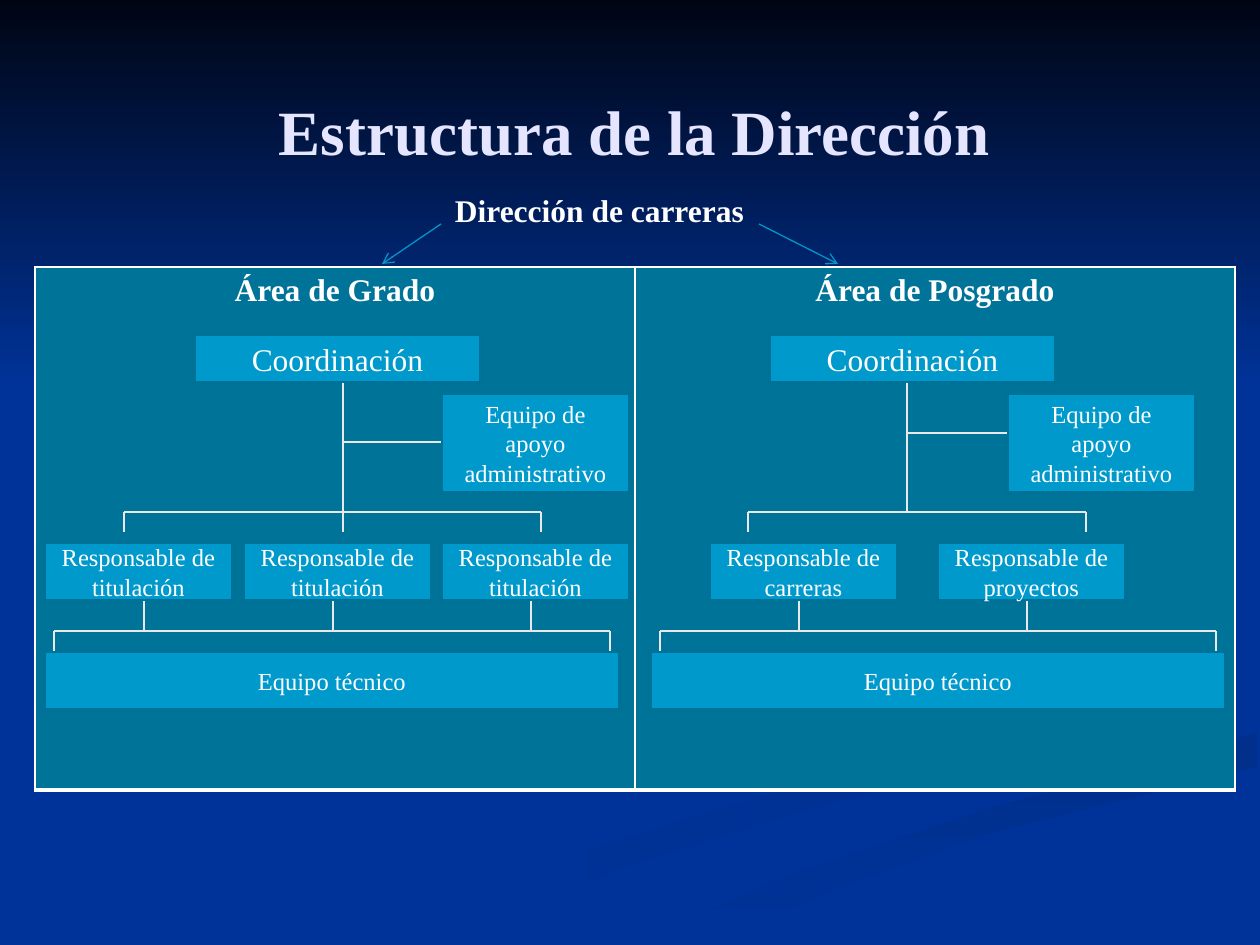
from lxml import etree
from pptx import Presentation
from pptx.dml.color import RGBColor
from pptx.enum.shapes import MSO_CONNECTOR as CONN, MSO_SHAPE as SHAPE
from pptx.enum.text import MSO_ANCHOR as ANCHOR, PP_ALIGN as ALIGN
from pptx.oxml.ns import qn
from pptx.util import Pt

SCALE = 914400 / 126
FONT = "Times New Roman"
COLORS = {
    "back": "003399", "night": "000514", "title": "E5E5FF", "white": "FFFFFF",
    "panel": "007399", "box": "0099CC", "edge": "007197", "line": "E9E9E9",
    "arrow": "0096C8", "shade": "003193", "deep": "002F8C",
}

# Background ribbons: start colour, end colour, clockwise angle, outline
RIBBONS = [
    ("back", "shade", 0, [
        (990, 713), (931, 753), (730, 805), (525, 869), (378, 944), (455, 944),
        (629, 866), (820, 806), (983, 763), (1007, 736)]),
    ("deep", "back", 90, [
        (634, 944), (719, 944), (818, 895), (989, 833), (1257, 767),
        (1257, 732), (1179, 759), (1004, 804), (794, 873)]),
]

# Rows of the chart: top and height
COORD_ROW, SUPPORT_ROW, ROLE_ROW, TEAM_ROW = (
    (334, 49), (393, 100), (542, 59), (651, 59))
BRANCH_Y, BUS_Y, DROP = 512, 631, 20
ROLE_W, TEAM_W = 189, 576

# One branch for each area
AREAS = [
    dict(coord=194, support=441, trunk=343, link=442, tops=(124, 343, 541),
         stems=(144, 333, 531), team=44,
         roles=[(44, "titulación"), (243, "titulación"), (441, "titulación")]),
    dict(coord=769, support=1007, trunk=907, link=433, tops=(748, 1086),
         stems=(799, 1027), team=650,
         roles=[(709, "carreras"), (937, "proyectos")]),
]


def px(n):
    return round(n * SCALE)


def rgb(name):
    return RGBColor.from_string(COLORS[name])


def write(tf, lines, size, color="white", bold=False):
    tf.word_wrap = True
    for i, line in enumerate(lines):
        p = tf.add_paragraph() if i else tf.paragraphs[0]
        p.alignment = ALIGN.CENTER
        r = p.add_run()
        r.text = line
        r.font.name, r.font.size, r.font.bold = FONT, Pt(size), bold
        r.font.color.rgb = rgb(color)


def paint_gradient(sp, first, last, angle):
    sp.shadow.inherit = False
    sp.line.fill.background()
    sp.fill.gradient()
    sp.fill.gradient_angle = (360 - angle) % 360
    for stop, color in zip(sp.fill.gradient_stops, (first, last)):
        stop.color.rgb = rgb(color)


def add_background(s):
    s.background.fill.solid()
    s.background.fill.fore_color.rgb = rgb("back")
    for first, last, angle, points in RIBBONS:
        builder = s.shapes.build_freeform(*points[0], scale=SCALE)
        builder.add_line_segments(points[1:], close=True)
        paint_gradient(builder.convert_to_shape(), first, last, angle)
    sky = s.shapes.add_shape(SHAPE.RECTANGLE, 0, 0, px(1260), px(388))
    paint_gradient(sky, "night", "back", 90)


def add_label(s, x, y, w, h, text, size, color):
    tf = s.shapes.add_textbox(px(x), px(y), px(w), px(h)).text_frame
    tf.vertical_anchor = ANCHOR.MIDDLE
    write(tf, [text], size, color, bold=True)


def add_box(s, x, w, row, lines, size=14):
    y, h = row
    sp = s.shapes.add_shape(SHAPE.RECTANGLE, px(x), px(y), px(w), px(h))
    sp.shadow.inherit = False
    sp.fill.solid()
    sp.fill.fore_color.rgb = rgb("box")
    sp.line.color.rgb = rgb("edge")
    sp.line.width = Pt(2)
    tf = sp.text_frame
    tf.margin_top = tf.margin_bottom = 0
    tf.vertical_anchor = ANCHOR.MIDDLE
    write(tf, lines, size)


def add_line(s, x1, y1, x2, y2, color="line", arrow=False):
    c = s.shapes.add_connector(CONN.STRAIGHT, px(x1), px(y1), px(x2), px(y2))
    c.line.color.rgb = rgb(color)
    c.line.width = Pt(0.75)
    if arrow:
        ln = c._element.spPr.find(qn("a:ln"))
        etree.SubElement(ln, qn("a:tailEnd"), type="arrow")
    etree.SubElement(c._element.spPr, qn("a:effectLst"))


def add_bracket(s, xs, y):
    add_line(s, xs[0], y, xs[-1], y)
    for x in xs:
        add_line(s, x, y, x, y + DROP)


def add_area_table(s, headings):
    table = s.shapes.add_table(1, 2, px(35), px(267), px(1200), px(523)).table
    for cell, heading in zip(table.iter_cells(), headings):
        tc_pr = cell._tc.get_or_add_tcPr()
        for side, width in (("L", 1), ("R", 1), ("T", 1), ("B", 3)):
            ln = etree.SubElement(tc_pr, qn(f"a:ln{side}"), w=str(int(Pt(width))))
            fill = etree.SubElement(ln, qn("a:solidFill"))
            etree.SubElement(fill, qn("a:srgbClr"), val=COLORS["white"])
        cell.fill.solid()
        cell.fill.fore_color.rgb = rgb("panel")
        write(cell.text_frame, [heading], 18, bold=True)


def add_area(s, a):
    # Boxes
    add_box(s, a["coord"], 287, COORD_ROW, ["Coordinación"], 18)
    add_box(s, a["support"], ROLE_W, SUPPORT_ROW,
            ["Equipo de apoyo administrativo"])
    for x, role in a["roles"]:
        add_box(s, x, ROLE_W, ROLE_ROW, ["Responsable de", role])
    add_box(s, a["team"], TEAM_W, TEAM_ROW, ["Equipo técnico"])
    # Coordination down to the roles
    add_line(s, a["trunk"], sum(COORD_ROW), a["trunk"], BRANCH_Y)
    add_line(s, a["trunk"], a["link"], a["support"], a["link"])
    add_bracket(s, a["tops"], BRANCH_Y)
    # Roles down to the technical team
    for x in a["stems"]:
        add_line(s, x, sum(ROLE_ROW), x, BUS_Y)
    add_bracket(s, (a["team"] + 10, a["team"] + TEAM_W - 10), BUS_Y)


def main():
    prs = Presentation()
    prs.slide_width, prs.slide_height = px(1260), px(945)
    s = prs.slides.add_slide(prs.slide_layouts[6])
    add_background(s)
    add_label(s, 74, 96, 1121, 69, "Estructura de la Dirección", 36, "title")
    add_area_table(s, ["Área de Grado", "Área de Posgrado"])
    for area in AREAS:
        add_area(s, area)
    # Head of the chart
    add_label(s, 282, 185, 635, 50, "Dirección de carreras", 18, "white")
    for start, end in ((441, 382), (759, 838)):
        add_line(s, start, 224, end, 264, "arrow", arrow=True)
    prs.save("out.pptx")


if __name__ == "__main__":
    main()
